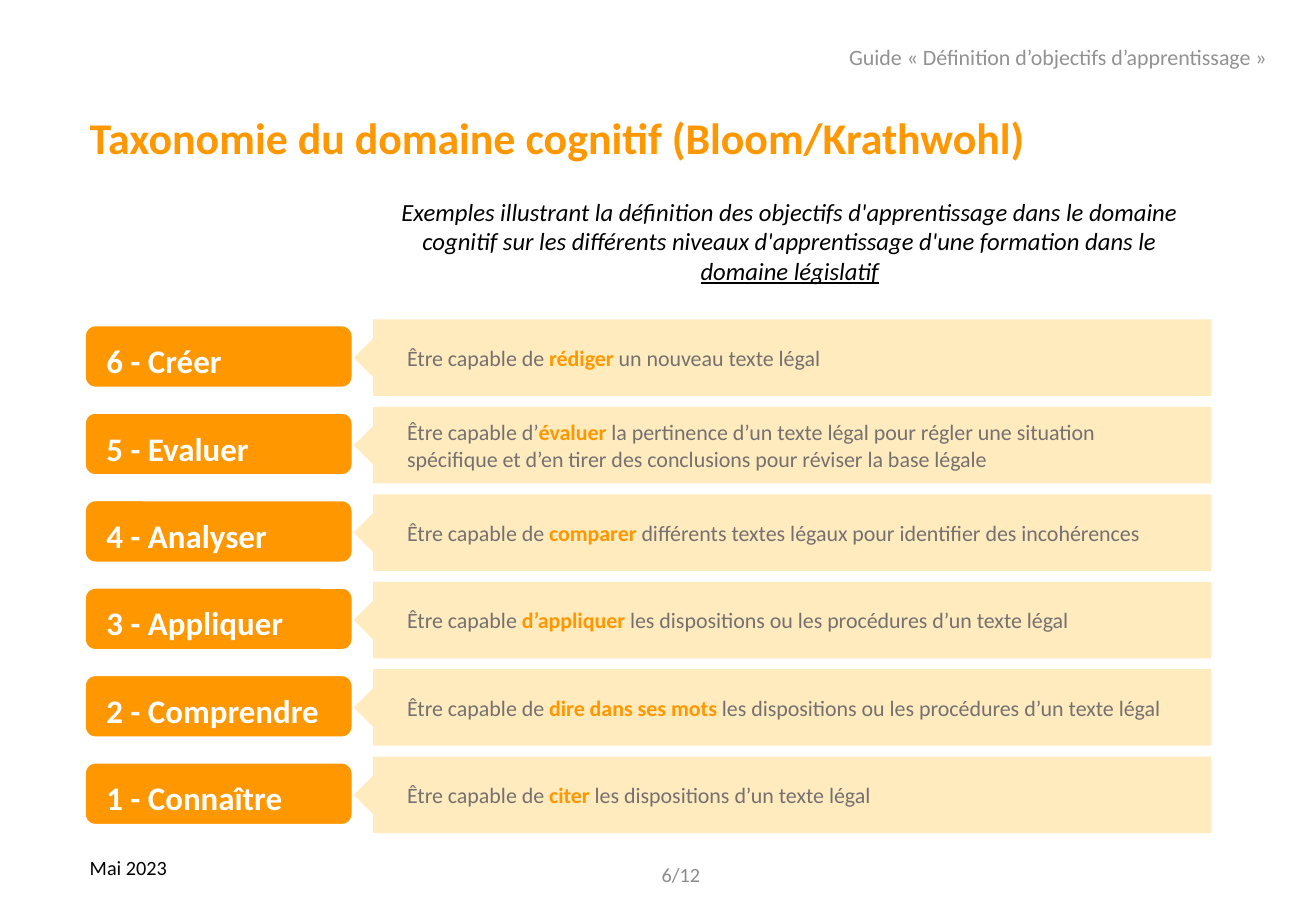
import pptx
import pptx.util
import pptx.dml.color
import pptx.enum.shapes
import pptx.enum.text

RGBColor = pptx.dml.color.RGBColor
SHAPE = pptx.enum.shapes.MSO_SHAPE
ALIGN = pptx.enum.text.PP_ALIGN
ANCHOR = pptx.enum.text.MSO_ANCHOR
Inches = pptx.util.Inches

ORANGE = RGBColor(0xFF, 0x97, 0x00)
CREAM = RGBColor(0xFF, 0xEB, 0xBD)
WHITE = RGBColor(0xFF, 0xFF, 0xFF)
BLACK = RGBColor(0x00, 0x00, 0x00)
BODY_GREY = RGBColor(0x76, 0x71, 0x71)
HEADER_GREY = RGBColor(0x92, 0x92, 0x92)
PAGE_GREY = RGBColor(0x8C, 0x8C, 0x8C)

# Content
HEADER = "Guide «\u00a0Définition d’objectifs d’apprentissage\u00a0»"
TITLE = "Taxonomie du domaine cognitif (Bloom/Krathwohl)"
INTRO = [
    ("Exemples illustrant la définition des objectifs d'apprentissage dans le domaine cognitif "
     "sur les différents niveaux d'apprentissage d'une formation dans le ", {}),
    ("domaine législatif", {"underline": True}),
]
DATE = "Mai 2023"
PAGE = "6/12"
LEVELS = [  # label, text before the verb, verb, text after it
    ("6 - Créer", "Être capable de ", "rédiger", " un nouveau texte légal"),
    ("5 - Evaluer", "Être capable d’", "évaluer",
     " la pertinence d’un texte légal pour régler une situation spécifique"
     " et d’en tirer des conclusions pour réviser la base légale"),
    ("4 - Analyser", "Être capable de ", "comparer",
     " différents textes légaux pour identifier des incohérences"),
    ("3 - Appliquer", "Être capable ", "d’appliquer",
     " les dispositions ou les procédures d’un texte légal"),
    ("2 - Comprendre", "Être capable de ", "dire dans ses mots",
     " les dispositions ou les procédures d’un texte légal"),
    ("1 - Connaître", "Être capable de ", "citer", " les dispositions d’un texte légal"),
]

# Grid, in inches
ROW_TOP, ROW_PITCH = 2.63, 0.72
BAND_H, LABEL_H = 0.63, 0.51
LABEL_X, LABEL_W = 0.7, 2.2
TIP_X = LABEL_X + LABEL_W
BAND_X, BAND_W = 3.07, 6.9
TIP_W = BAND_X + BAND_W - TIP_X

prs = pptx.Presentation()
prs.slide_width, prs.slide_height = Inches(10.83), Inches(7.5)
slide = prs.slides.add_slide(prs.slide_layouts[6])


def add_shape(kind, x, y, w, h, fill, line=None):
    sp = slide.shapes.add_shape(kind, Inches(x), Inches(y), Inches(w), Inches(h))
    sp.shadow.inherit = False
    sp.fill.solid()
    sp.fill.fore_color.rgb = fill
    if line is None:
        sp.line.fill.background()
    else:
        sp.line.color.rgb = line
        sp.line.width = pptx.util.Pt(1)
    return sp


def add_box(x, y, w, h):
    return slide.shapes.add_textbox(Inches(x), Inches(y), Inches(w), Inches(h))


def write(sp, text, size, color, align=ALIGN.LEFT, anchor=ANCHOR.MIDDLE,
          insets=(0.1, 0.05), spacing=1.0, bold=False, italic=False):
    """Fill a shape with a string or with (string, format changes) runs."""
    tf = sp.text_frame
    tf.word_wrap = True
    tf.vertical_anchor = anchor
    tf.margin_left = tf.margin_right = Inches(insets[0])
    tf.margin_top = tf.margin_bottom = Inches(insets[1])
    p = tf.paragraphs[0]
    p.alignment = align
    p.line_spacing = spacing
    for part, changes in ([(text, {})] if isinstance(text, str) else text):
        r = p.add_run()
        r.text = part
        r.font.name = "Calibri"
        r.font.size = pptx.util.Pt(size)
        r.font.bold = changes.get("bold", bold)
        r.font.italic = italic
        r.font.underline = changes.get("underline", False)
        r.font.color.rgb = changes.get("color", color)


# Levels: a band with a tip pointing at its label
for i, (label, before, verb, after) in enumerate(LEVELS):
    top = ROW_TOP + i * ROW_PITCH
    tip = add_shape(SHAPE.PENTAGON, TIP_X, top, TIP_W, BAND_H, CREAM, WHITE)
    tip.rotation = 180
    band = add_shape(SHAPE.RECTANGLE, BAND_X, top, BAND_W, BAND_H, CREAM)
    write(band, [(before, {}), (verb, {"bold": True, "color": ORANGE}), (after, {})],
          13, BODY_GREY, insets=(0.28, 0.05))
    box = add_shape(SHAPE.ROUNDED_RECTANGLE, LABEL_X, top + 0.05, LABEL_W, LABEL_H,
                    ORANGE, WHITE)
    write(box, label, 19.5, WHITE, insets=(0.15, 0.07), spacing=1.2, bold=True)

# Header, title and introduction
write(add_box(6.89, 0.15, 3.9, 0.67), HEADER, 13, HEADER_GREY, spacing=0.9)
write(add_box(0.64, 0.82, 9.92, 0.67), TITLE, 26, ORANGE, spacing=0.9, bold=True)
write(add_box(3.06, 1.57, 6.88, 0.84), INTRO, 14.6, BLACK,
      align=ALIGN.CENTER, anchor=ANCHOR.TOP, italic=True)

# Footer
write(add_box(0.64, 6.99, 1.18, 0.3), DATE, 12, BLACK, anchor=ANCHOR.TOP)
write(add_box(5.32, 7, 0.54, 0.4), PAGE, 12, PAGE_GREY, align=ALIGN.RIGHT)

prs.save("out.pptx")
